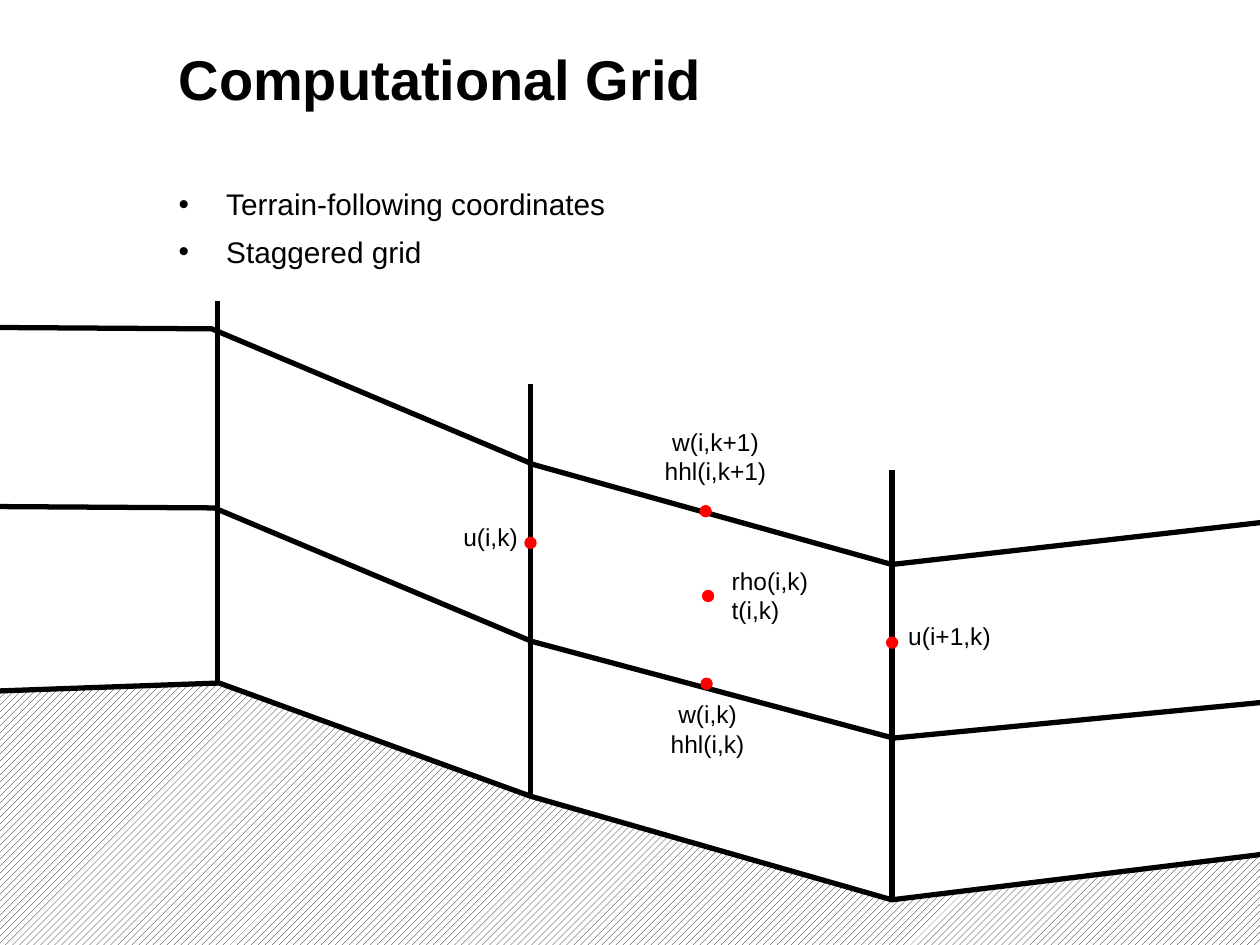
from lxml.etree import SubElement
from pptx import Presentation
from pptx.dml.color import RGBColor
from pptx.enum.dml import MSO_PATTERN
from pptx.enum.shapes import MSO_CONNECTOR, MSO_SHAPE
from pptx.enum.text import MSO_ANCHOR, MSO_AUTO_SIZE, PP_ALIGN
from pptx.oxml.ns import qn
from pptx.util import Cm, Pt

BLACK = RGBColor(0, 0, 0)
WHITE = RGBColor(255, 255, 255)
RED = RGBColor(255, 0, 0)
FONT = "Arial"
GRID_LINE = Pt(3)
DOT_SIZE = 0.25

# All diagram coordinates are in cm, relative to the diagram box
TERRAIN = [(-0.3, 7.87), (4.42, 7.7), (10.69, 9.98), (17.98, 12.07),
           (25.88, 11.1), (25.93, 13.39), (-0.28, 13.31), (-0.41, 7.98)]
LEVELS = [
    [(-0.46, 4.14), (4.32, 4.17), (10.72, 6.86), (18.01, 8.81), (25.86, 8.05)],
    [(-0.51, 0.53), (4.27, 0.56), (10.77, 3.3), (17.98, 5.31), (25.81, 4.42)],
]
COLUMNS = [(10.69, 9.98, 1.68), (17.98, 12.07, 3.4), (4.39, 7.65, 0)]  # x, bottom, top
GRID_POINTS = [(14.15, 5.82), (14.12, 7.59), (17.86, 6.76), (14.1, 4.11), (10.57, 4.75)]
LABELS = [  # left, top, width, height, lines, alignment
    (18.06, 6.32, 2.18, 0.86, ["u(i+1,k)"], PP_ALIGN.LEFT),
    (9.09, 4.32, 1.63, 0.86, ["u(i,k)"], PP_ALIGN.LEFT),
    (13.13, 2.41, 2.59, 1.45, ["w(i,k+1)", "hhl(i,k+1)"], PP_ALIGN.CENTER),
    (13.26, 7.9, 2.01, 1.45, ["w(i,k)", "hhl(i,k)"], PP_ALIGN.CENTER),
    (14.5, 5.21, 2.06, 1.45, ["rho(i,k)", "t(i,k)"], PP_ALIGN.LEFT),
]


def add_run(paragraph, text, size, bold=False):
    run = paragraph.add_run()
    run.text = text
    run.font.name = FONT
    run.font.size = Pt(size)
    run.font.bold = bold
    run.font.color.rgb = BLACK


def fit_placeholder(placeholder, left, top, width, height):
    placeholder.left, placeholder.top = Cm(left), Cm(top)
    placeholder.width, placeholder.height = Cm(width), Cm(height)
    frame = placeholder.text_frame
    frame.margin_left = frame.margin_right = frame.margin_top = frame.margin_bottom = 0
    frame.vertical_anchor = MSO_ANCHOR.TOP
    frame.auto_size = MSO_AUTO_SIZE.NONE
    frame.word_wrap = True
    return frame


def fill_title(slide, text, left, top, width, height):
    heading = fit_placeholder(slide.shapes.title, left, top, width, height).paragraphs[0]
    heading.alignment = PP_ALIGN.LEFT
    add_run(heading, text, 32, bold=True)


def fill_bullets(slide, items, left, top, width, height):
    frame = fit_placeholder(slide.placeholders[1], left, top, width, height)
    for index, item in enumerate(items):
        bullet = frame.paragraphs[0] if index == 0 else frame.add_paragraph()
        properties = bullet._p.get_or_add_pPr()
        properties.set("marL", str(Cm(0.96)))
        properties.set("indent", str(Cm(-0.96)))
        SubElement(properties, qn("a:buChar")).set("char", "•")
        bullet.space_before = Pt(3.4 if index else 0)
        bullet.space_after = Pt(3.4)
        add_run(bullet, item, 17)


def add_outline(slide, points, left, top, close=False):
    start, *rest = [(Cm(x), Cm(y)) for x, y in points]
    builder = slide.shapes.build_freeform(*start)
    builder.add_line_segments(rest, close=close)
    outline = builder.convert_to_shape(Cm(left), Cm(top))
    outline.shadow.inherit = False
    outline.fill.background()
    outline.line.color.rgb = BLACK
    outline.line.width = GRID_LINE
    return outline


def draw_grid(slide, left, top):
    # Hatched ground, then the levels that follow it
    ground = add_outline(slide, TERRAIN, left, top, close=True)
    ground.fill.patterned()
    ground.fill.pattern = MSO_PATTERN.WIDE_UPWARD_DIAGONAL
    ground.fill.fore_color.rgb = BLACK
    ground.fill.back_color.rgb = WHITE
    for level in LEVELS:
        add_outline(slide, level, left, top)

    # Vertical cell boundaries
    for x, bottom, upper in COLUMNS:
        column = slide.shapes.add_connector(
            MSO_CONNECTOR.STRAIGHT, Cm(left + x), Cm(top + bottom),
            Cm(left + x), Cm(top + upper))
        column.line.color.rgb = BLACK
        column.line.width = GRID_LINE
        SubElement(column._element.spPr, qn("a:effectLst"))

    # Points where the variables are defined
    for x, y in GRID_POINTS:
        dot = slide.shapes.add_shape(MSO_SHAPE.OVAL, Cm(left + x), Cm(top + y),
                                     Cm(DOT_SIZE), Cm(DOT_SIZE))
        dot.shadow.inherit = False
        dot.fill.solid()
        dot.fill.fore_color.rgb = RED
        dot.line.fill.background()

    # Variable names
    for x, y, width, height, lines, alignment in LABELS:
        label = slide.shapes.add_textbox(Cm(left + x), Cm(top + y), Cm(width), Cm(height))
        frame = label.text_frame
        frame.word_wrap = False
        frame.auto_size = MSO_AUTO_SIZE.SHAPE_TO_FIT_TEXT
        for index, line in enumerate(lines):
            paragraph = frame.paragraphs[0] if index == 0 else frame.add_paragraph()
            paragraph.alignment = alignment
            add_run(paragraph, line, 14)


def main():
    deck = Presentation()
    deck.slide_width, deck.slide_height = Cm(25.4), Cm(19.05)
    slide = deck.slides.add_slide(deck.slide_layouts[1])
    fill_title(slide, "Computational Grid", 3.6, 0.9, 20.73, 2.74)
    fill_bullets(slide, ["Terrain-following coordinates", "Staggered grid"],
                 3.6, 3.75, 20.75, 13.23)
    draw_grid(slide, 0, 6.07)
    deck.save("out.pptx")


if __name__ == "__main__":
    main()
